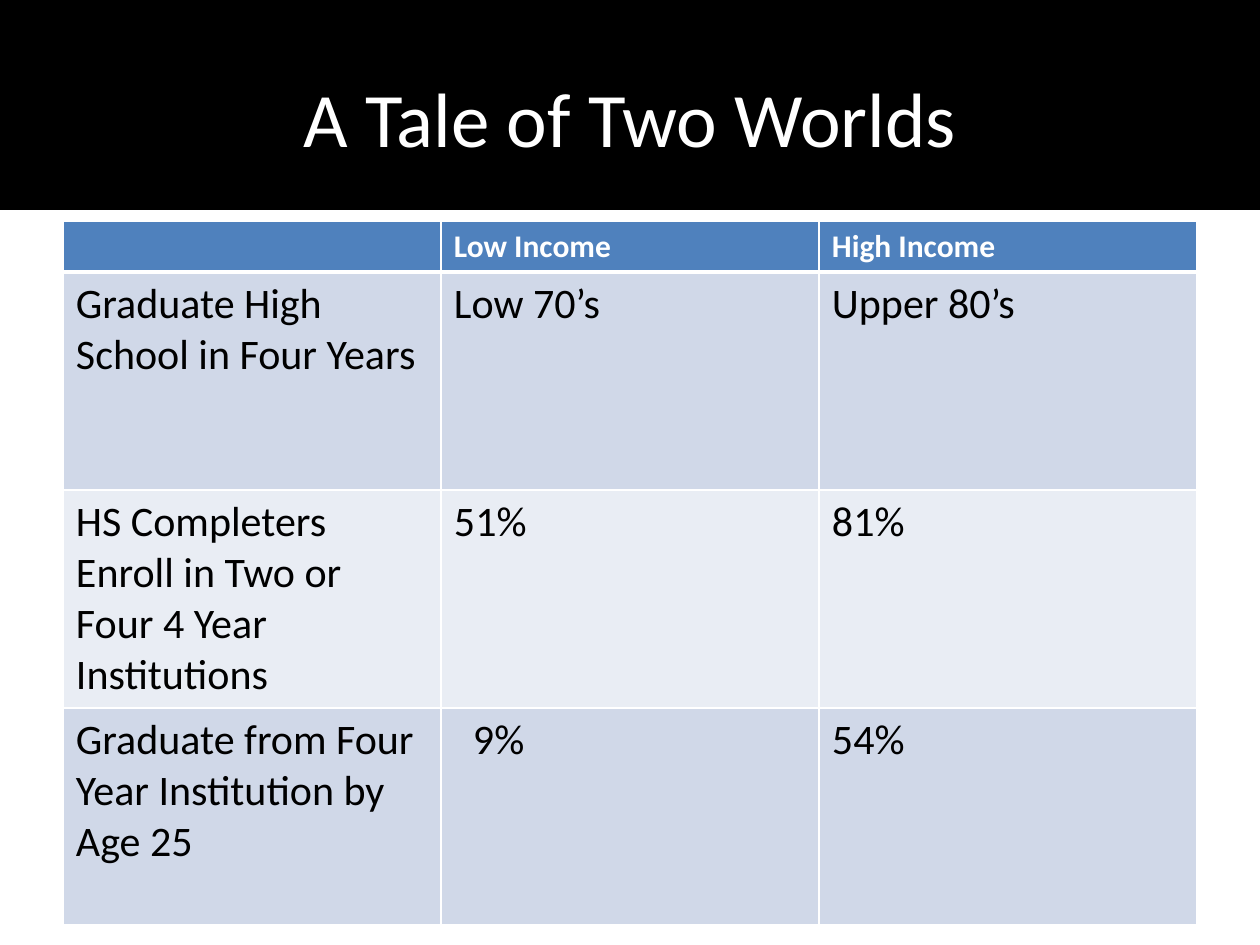
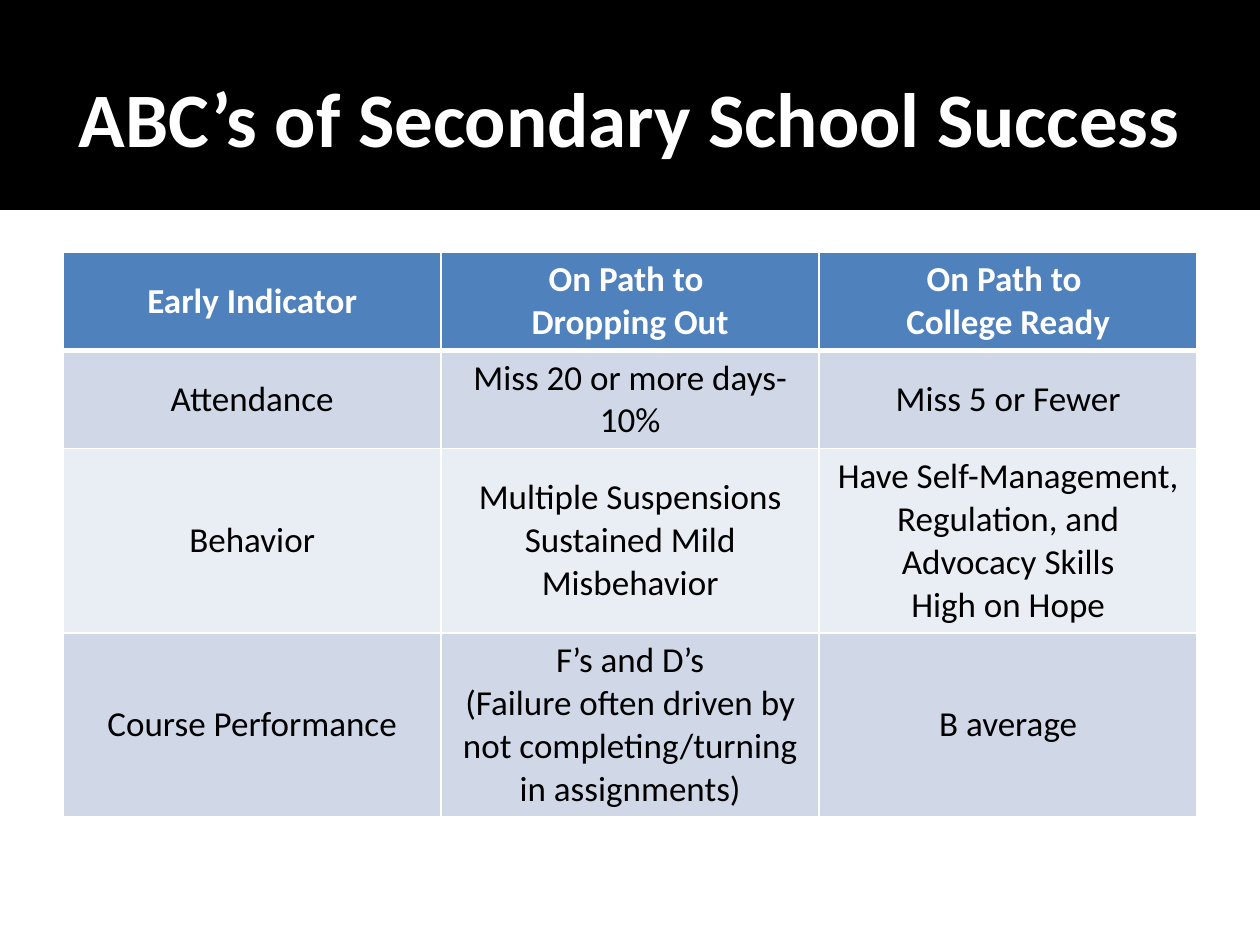
from dataclasses import dataclass

from lxml.etree import SubElement
from pptx import Presentation
from pptx.dml.color import RGBColor
from pptx.enum.shapes import MSO_SHAPE
from pptx.enum.text import MSO_ANCHOR, PP_ALIGN
from pptx.oxml.ns import qn
from pptx.util import Emu, Pt

PX_PER_INCH = 126
SLIDE_W, SLIDE_H = 1260, 945
MARGIN = 63
CONTENT_W = SLIDE_W - 2 * MARGIN
BAND_H = 210
CELL_MARGIN = 13
FONT = "Calibri"
COLORS = {
    "band": "000000",
    "title": "FFFFFF",
    "header": "4F81BD",
    "header_text": "FFFFFF",
    "odd_row": "D0D8E8",
    "even_row": "E9EDF4",
    "text": "000000",
    "border": "FFFFFF",
}


@dataclass
class TableSlide:
    title: str
    title_bold: bool
    top: int
    row_heights: list[int]
    header_size: int
    body_size: int
    centered: bool
    rows: list[list[str]]
    indents: dict[tuple[int, int], int]  # extra left margin by (row, column)


TABLE_SLIDES = [
    TableSlide(
        title="A Tale of Two Worlds", title_bold=False,
        top=221, row_heights=[50, 218, 218, 217],
        header_size=18, body_size=24, centered=False,
        rows=[
            ["", "Low Income", "High Income"],
            ["Graduate High School in Four Years", "Low 70’s", "Upper 80’s"],
            ["HS Completers Enroll in Two or Four 4 Year Institutions", "51%", "81%"],
            ["Graduate from Four Year Institution by Age 25", "9%", "54%"],
        ],
        indents={(3, 1): 19},
    ),
    TableSlide(
        title="ABC’s of Secondary School Success", title_bold=True,
        top=252, row_heights=[98, 98, 184, 184],
        header_size=20, body_size=20, centered=True,
        rows=[
            ["Early Indicator", "On Path to \nDropping Out", "On Path to \nCollege Ready"],
            ["Attendance", "Miss 20 or more days- 10%", "Miss 5 or Fewer"],
            ["Behavior", "Multiple Suspensions\nSustained Mild Misbehavior",
             "Have Self-Management, Regulation, and Advocacy Skills\nHigh on Hope"],
            ["Course Performance",
             "F’s and D’s\n(Failure often driven by not completing/turning in assignments)",
             "B average"],
        ],
        indents={},
    ),
]


def px(n: int) -> Emu:
    return Emu(round(n * 914400 / PX_PER_INCH))


def rgb(name: str) -> RGBColor:
    return RGBColor.from_string(COLORS[name])


def style_text(tf, size: int, color: str, bold: bool, centered: bool) -> None:
    for p in tf.paragraphs:
        p.alignment = PP_ALIGN.CENTER if centered else PP_ALIGN.LEFT
        p.font.size = Pt(size)
        for r in p.runs:
            r.font.name = FONT
            r.font.size = Pt(size)
            r.font.bold = bold
            r.font.color.rgb = rgb(color)


def add_title(s, text: str, bold: bool) -> None:
    # Black band behind the title
    band = s.shapes.add_shape(MSO_SHAPE.RECTANGLE, 0, 0, px(SLIDE_W), px(BAND_H))
    band.shadow.inherit = False
    band.fill.solid()
    band.fill.fore_color.rgb = rgb("band")
    band.line.fill.background()

    title = s.shapes.title
    title.element.addprevious(band.element)
    title.left, title.top = px(MARGIN), px(38)
    title.width, title.height = px(CONTENT_W), px(157)
    tf = title.text_frame
    tf.text = text
    tf.word_wrap = True
    tf.vertical_anchor = MSO_ANCHOR.MIDDLE
    style_text(tf, 44, "title", bold, True)


def set_borders(cell, top: int, bottom: int) -> None:
    tcPr = cell._tc.get_or_add_tcPr()
    for tag, width in (("a:lnL", 1), ("a:lnR", 1), ("a:lnT", top), ("a:lnB", bottom)):
        ln = SubElement(tcPr, qn(tag), w=str(Pt(width)))
        fill = SubElement(ln, qn("a:solidFill"))
        SubElement(fill, qn("a:srgbClr"), val=COLORS["border"])


def add_table(s, spec: TableSlide) -> None:
    n_cols = len(spec.rows[0])
    frame = s.shapes.add_table(len(spec.rows), n_cols, px(MARGIN), px(spec.top),
                               px(CONTENT_W), px(sum(spec.row_heights)))
    table = frame.table
    for column in table.columns:
        column.width = px(CONTENT_W // n_cols)
    for i, (height, texts) in enumerate(zip(spec.row_heights, spec.rows)):
        table.rows[i].height = px(height)
        header = i == 0
        row_fill = "header" if header else "odd_row" if i % 2 else "even_row"
        for j, text in enumerate(texts):
            cell = table.cell(i, j)
            cell.text_frame.text = text
            cell.margin_left = px(CELL_MARGIN + spec.indents.get((i, j), 0))
            cell.vertical_anchor = MSO_ANCHOR.MIDDLE if spec.centered else MSO_ANCHOR.TOP
            style_text(cell.text_frame,
                       spec.header_size if header else spec.body_size,
                       "header_text" if header else "text", header, spec.centered)
            # Thick rule under the header row
            set_borders(cell, top=3 if i == 1 else 1, bottom=3 if header else 1)
            cell.fill.solid()
            cell.fill.fore_color.rgb = rgb(row_fill)


def main() -> None:
    prs = Presentation()
    prs.slide_width, prs.slide_height = px(SLIDE_W), px(SLIDE_H)
    for spec in TABLE_SLIDES:
        s = prs.slides.add_slide(prs.slide_layouts[5])
        add_title(s, spec.title, spec.title_bold)
        add_table(s, spec)
    prs.save("out.pptx")


if __name__ == "__main__":
    main()
